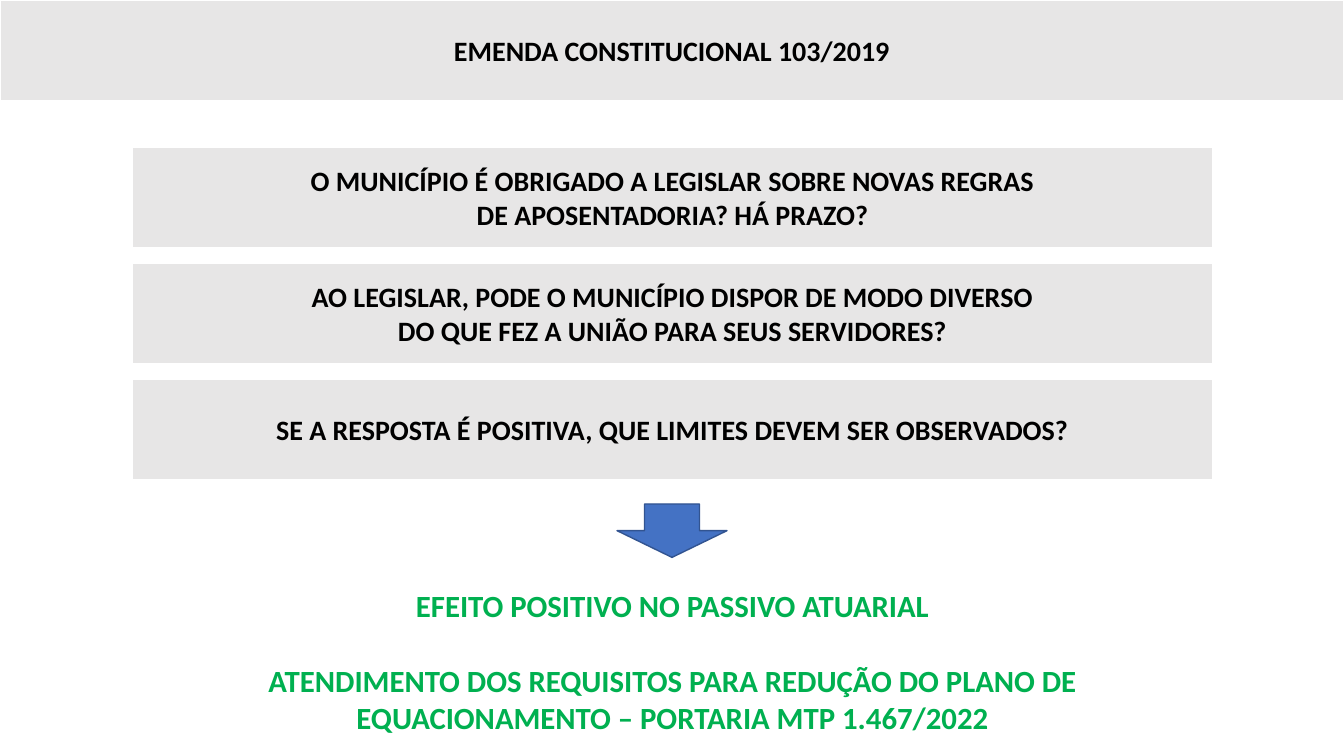
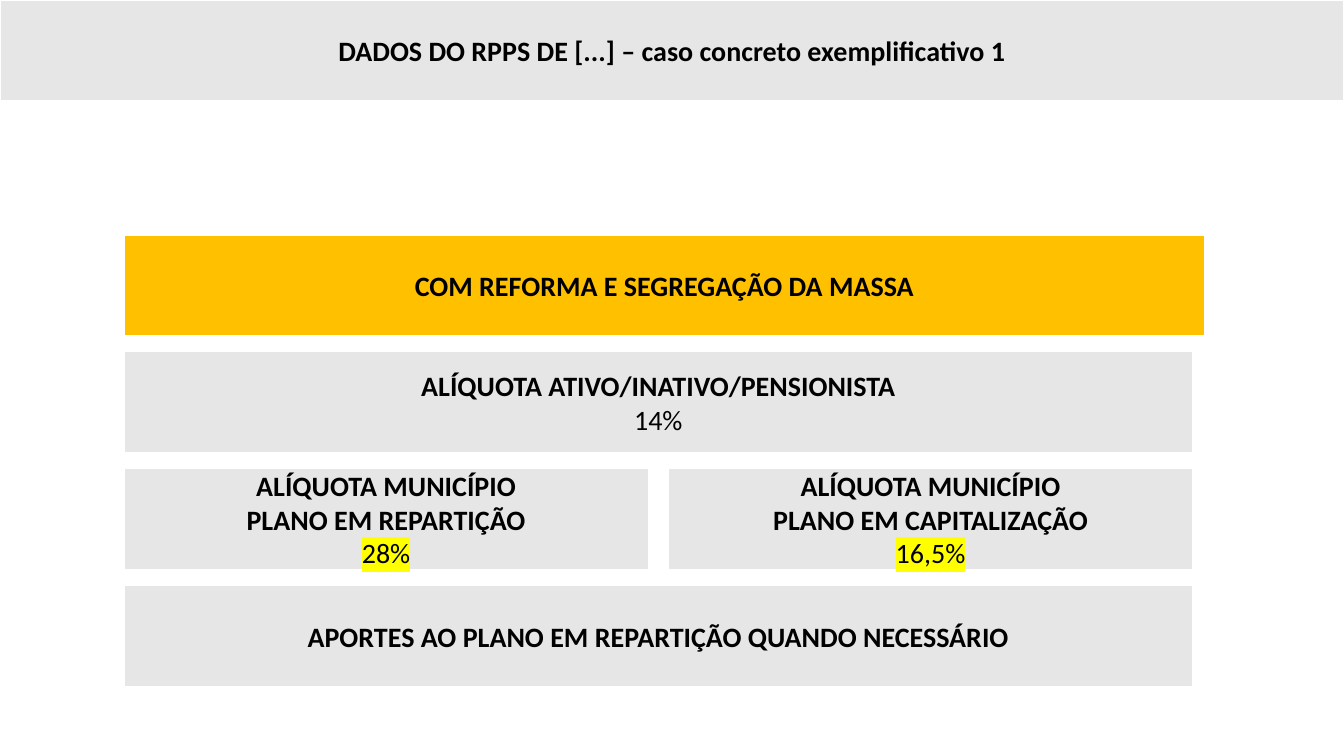
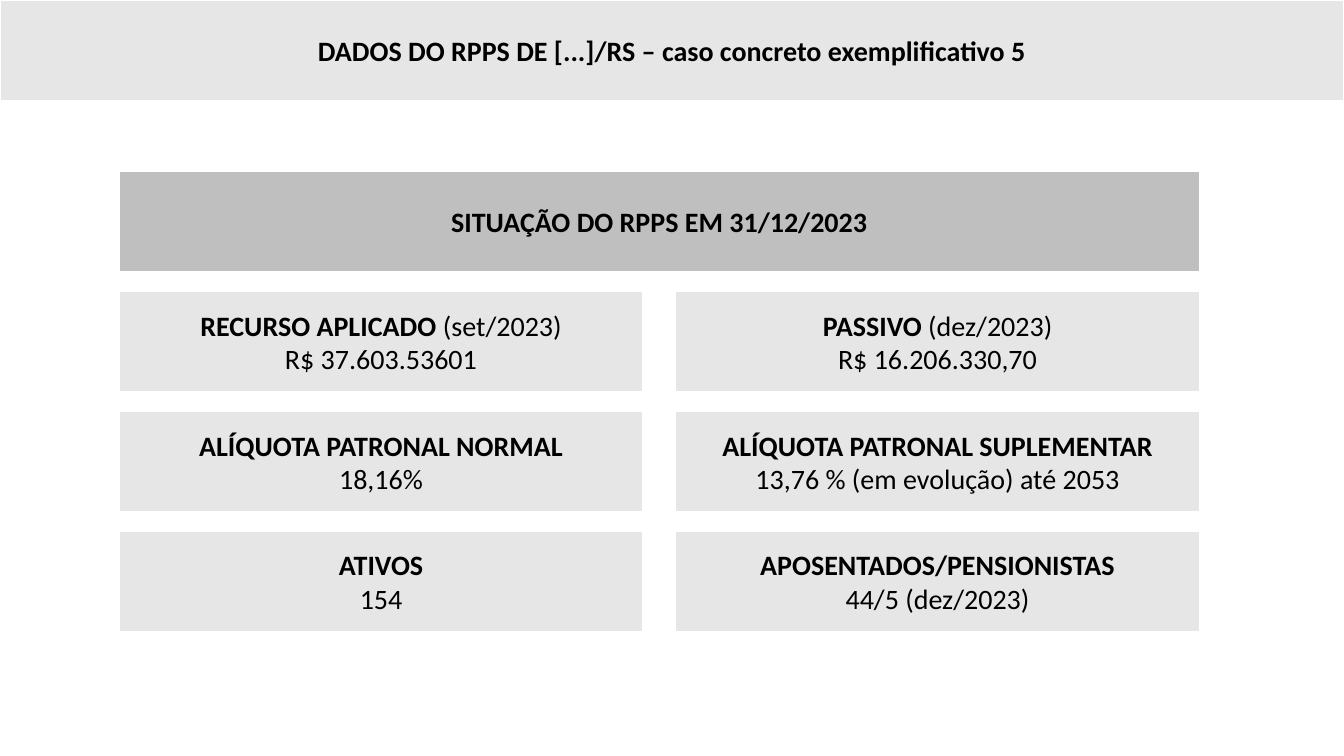
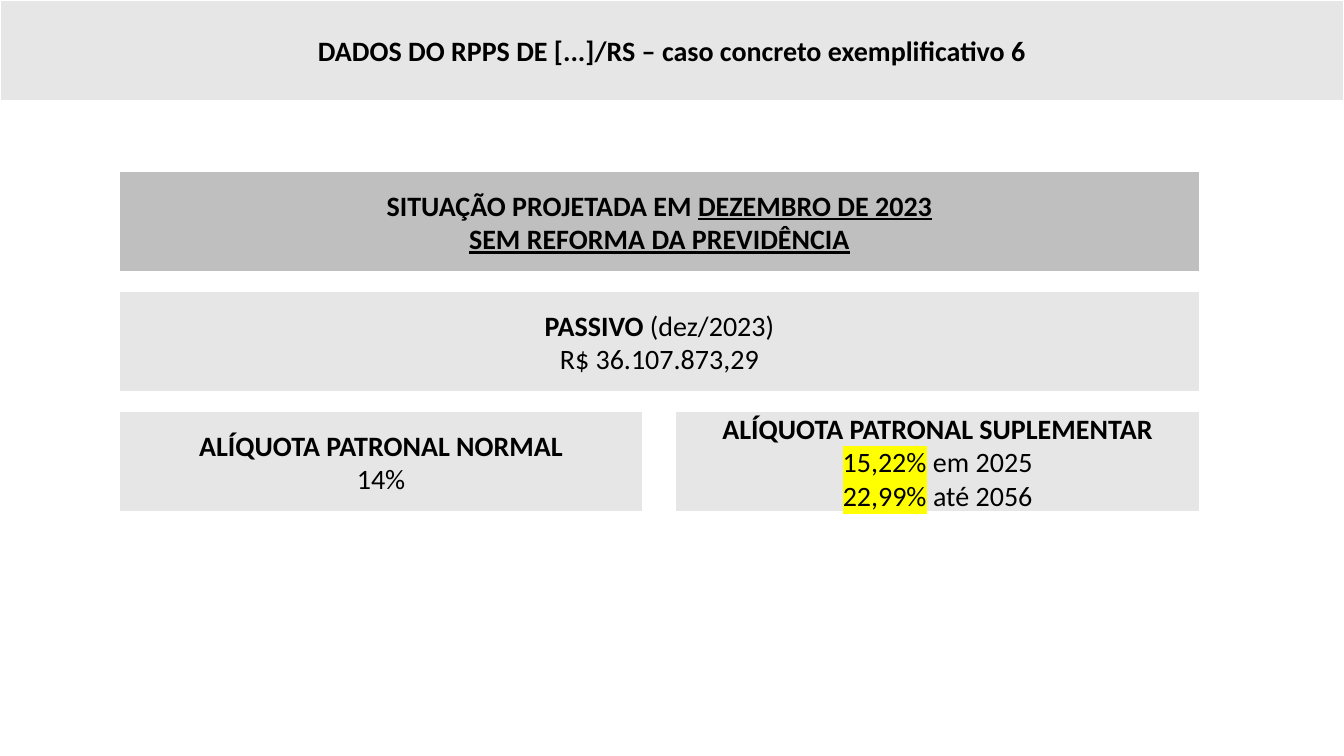
from dataclasses import dataclass

from lxml import etree
from pptx import Presentation
from pptx.dml.color import RGBColor
from pptx.enum.shapes import MSO_SHAPE
from pptx.enum.text import MSO_ANCHOR, PP_ALIGN
from pptx.oxml.ns import qn
from pptx.util import Inches, Pt

RECTANGLE = MSO_SHAPE.RECTANGLE
DOWN_ARROW = MSO_SHAPE.DOWN_ARROW
CENTER = PP_ALIGN.CENTER
MIDDLE = MSO_ANCHOR.MIDDLE


@dataclass(frozen=True)
class Theme:
    font: str = "Calibri"
    body_size: int = 20
    conclusion_size: int = 22
    conclusion_gap: int = 27
    outline: int = 1
    text: str = "000000"
    conclusion: str = "00B050"
    card: str = "E7E6E6"
    banner: str = "BFBFBF"
    accent_banner: str = "FFC000"
    card_outline: str = "FFFFFF"
    arrow: str = "4472C4"
    arrow_outline: str = "325491"
    highlight: str = "FFFF00"


@dataclass(frozen=True)
class Span:
    text: str
    bold: bool = False
    underline: bool = False
    marked: bool = False


THEME = Theme()
SLIDE_WIDTH, SLIDE_HEIGHT = 13.33, 7.5
CARD_HEIGHT = 1
HALF_WIDTH = 5.2
FULL_WIDTH = 10.72


def bold(text):
    return Span(text, bold=True)


def underlined(text):
    return Span(text, bold=True, underline=True)


def marked(text):
    return Span(text, marked=True)


def format_run(run, span, size, color):
    run.font.size = Pt(size)
    run.font.bold = span.bold
    if span.underline:
        run.font.underline = True
    run.font.color.rgb = RGBColor.from_string(color)
    if span.marked:
        highlight = etree.SubElement(run._r.get_or_add_rPr(), qn("a:highlight"))
        etree.SubElement(highlight, qn("a:srgbClr"), val=THEME.highlight)
    run.font.name = THEME.font


def write_lines(frame, lines, size=THEME.body_size, color=THEME.text, gap=0):
    """Write one centred paragraph per line; a line is a list of spans."""
    frame.word_wrap = True
    for index, spans in enumerate(lines):
        paragraph = frame.add_paragraph() if index else frame.paragraphs[0]
        paragraph.alignment = CENTER
        if index and gap:
            paragraph.space_before = Pt(gap)
        for span in spans:
            run = paragraph.add_run()
            run.text = span.text
            format_run(run, span, size, color)


def add_block(slide, kind, left, top, width, height, fill, outline):
    block = slide.shapes.add_shape(
        kind, Inches(left), Inches(top), Inches(width), Inches(height))
    block.shadow.inherit = False
    block.fill.solid()
    block.fill.fore_color.rgb = RGBColor.from_string(fill)
    block.line.color.rgb = RGBColor.from_string(outline)
    block.line.width = Pt(THEME.outline)
    return block


def add_card(slide, left, top, width, lines, fill=THEME.card):
    card = add_block(slide, RECTANGLE, left, top, width, CARD_HEIGHT,
                     fill, THEME.card_outline)
    card.text_frame.vertical_anchor = MIDDLE
    write_lines(card.text_frame, lines)


def add_card_rows(slide, left, top, step, rows, width=FULL_WIDTH):
    """Stack rows of one full-width card or two half-width cards."""
    for index, cards in enumerate(rows):
        card_width = width if len(cards) == 1 else HALF_WIDTH
        for column, lines in enumerate(cards):
            add_card(slide, left + column * (width - HALF_WIDTH),
                     top + index * step, card_width, lines)


def add_titled_slide(presentation, title):
    slide = presentation.slides.add_slide(presentation.slide_layouts[6])
    add_card(slide, 0, 0, SLIDE_WIDTH, [[bold(title)]])
    return slide


def add_conclusion(slide, left, top, statements):
    conclusion = slide.shapes.add_textbox(
        Inches(left), Inches(top), Inches(FULL_WIDTH), Inches(SLIDE_HEIGHT - top))
    write_lines(conclusion.text_frame, [[bold(text)] for text in statements],
                THEME.conclusion_size, THEME.conclusion, THEME.conclusion_gap)


def build_amendment(presentation):
    slide = add_titled_slide(presentation, "EMENDA CONSTITUCIONAL 103/2019")
    left = 1.31
    add_card_rows(slide, left, 1.46, 1.15, [
        [[[bold("O MUNICÍPIO É OBRIGADO A LEGISLAR SOBRE NOVAS REGRAS")],
          [bold("DE APOSENTADORIA? HÁ PRAZO?")]]],
        [[[bold("AO LEGISLAR, PODE O MUNICÍPIO DISPOR DE MODO DIVERSO")],
          [bold("DO QUE FEZ A UNIÃO PARA SEUS SERVIDORES?")]]],
        [[[bold("SE A RESPOSTA É POSITIVA, QUE LIMITES DEVEM SER OBSERVADOS?")]]],
    ])
    add_block(slide, DOWN_ARROW, 6.12, 5, 1.09, 0.53,
              THEME.arrow, THEME.arrow_outline)
    add_conclusion(slide, left, 5.77, [
        "EFEITO POSITIVO NO PASSIVO ATUARIAL",
        "ATENDIMENTO DOS REQUISITOS PARA REDUÇÃO DO PLANO DE "
        "EQUACIONAMENTO – PORTARIA MTP 1.467/2022",
    ])


def build_segregation_case(presentation):
    slide = add_titled_slide(
        presentation, "DADOS DO RPPS DE [...] – caso concreto exemplificativo 1")
    left, top, step = 1.23, 2.33, 1.16
    add_card(slide, left, top, FULL_WIDTH,
             [[bold("COM REFORMA E SEGREGAÇÃO DA MASSA")]], THEME.accent_banner)
    add_card_rows(slide, left, top + step, step, [
        [[[bold("ALÍQUOTA ATIVO/INATIVO/PENSIONISTA")], [Span("14%")]]],
        [[[bold("ALÍQUOTA MUNICÍPIO")], [bold("PLANO EM REPARTIÇÃO")],
          [marked("28%")]],
         [[bold("ALÍQUOTA MUNICÍPIO")], [bold("PLANO EM CAPITALIZAÇÃO")],
          [marked("16,5%")]]],
        [[[bold("APORTES AO PLANO EM REPARTIÇÃO QUANDO NECESSÁRIO")]]],
    ], width=10.6)


def build_situation_case(presentation, title, heading, rows):
    slide = add_titled_slide(presentation, title)
    left, top, step = 1.18, 1.7, 1.19
    add_card(slide, left, top, FULL_WIDTH, heading, THEME.banner)
    add_card_rows(slide, left, top + step, step, rows)


def main():
    presentation = Presentation()
    presentation.slide_width = Inches(SLIDE_WIDTH)
    presentation.slide_height = Inches(SLIDE_HEIGHT)

    build_amendment(presentation)
    build_segregation_case(presentation)
    build_situation_case(
        presentation,
        "DADOS DO RPPS DE [...]/RS – caso concreto exemplificativo 5",
        [[bold("SITUAÇÃO DO RPPS EM 31/12/2023")]],
        [
            [[[bold("RECURSO APLICADO"), Span(" (set/2023)")],
              [Span("R$ 37.603.53601")]],
             [[bold("PASSIVO"), Span(" (dez/2023)")],
              [Span("R$ 16.206.330,70")]]],
            [[[bold("ALÍQUOTA PATRONAL NORMAL")], [Span("18,16%")]],
             [[bold("ALÍQUOTA PATRONAL SUPLEMENTAR")],
              [Span("13,76 % (em evolução) até 2053")]]],
            [[[bold("ATIVOS")], [Span("154")]],
             [[bold("APOSENTADOS/PENSIONISTAS")], [Span("44/5 (dez/2023)")]]],
        ])
    build_situation_case(
        presentation,
        "DADOS DO RPPS DE [...]/RS – caso concreto exemplificativo 6",
        [[bold("SITUAÇÃO PROJETADA EM "), underlined("DEZEMBRO DE 2023")],
         [underlined("SEM REFORMA DA PREVIDÊNCIA")]],
        [
            [[[bold("PASSIVO"), Span(" (dez/2023)")],
              [Span("R$ 36.107.873,29")]]],
            [[[bold("ALÍQUOTA PATRONAL NORMAL")], [Span("14%")]],
             [[bold("ALÍQUOTA PATRONAL SUPLEMENTAR")],
              [marked("15,22%"), Span(" em 2025")],
              [marked("22,99%"), Span(" até 2056")]]],
        ])
    presentation.save("out.pptx")


if __name__ == "__main__":
    main()
